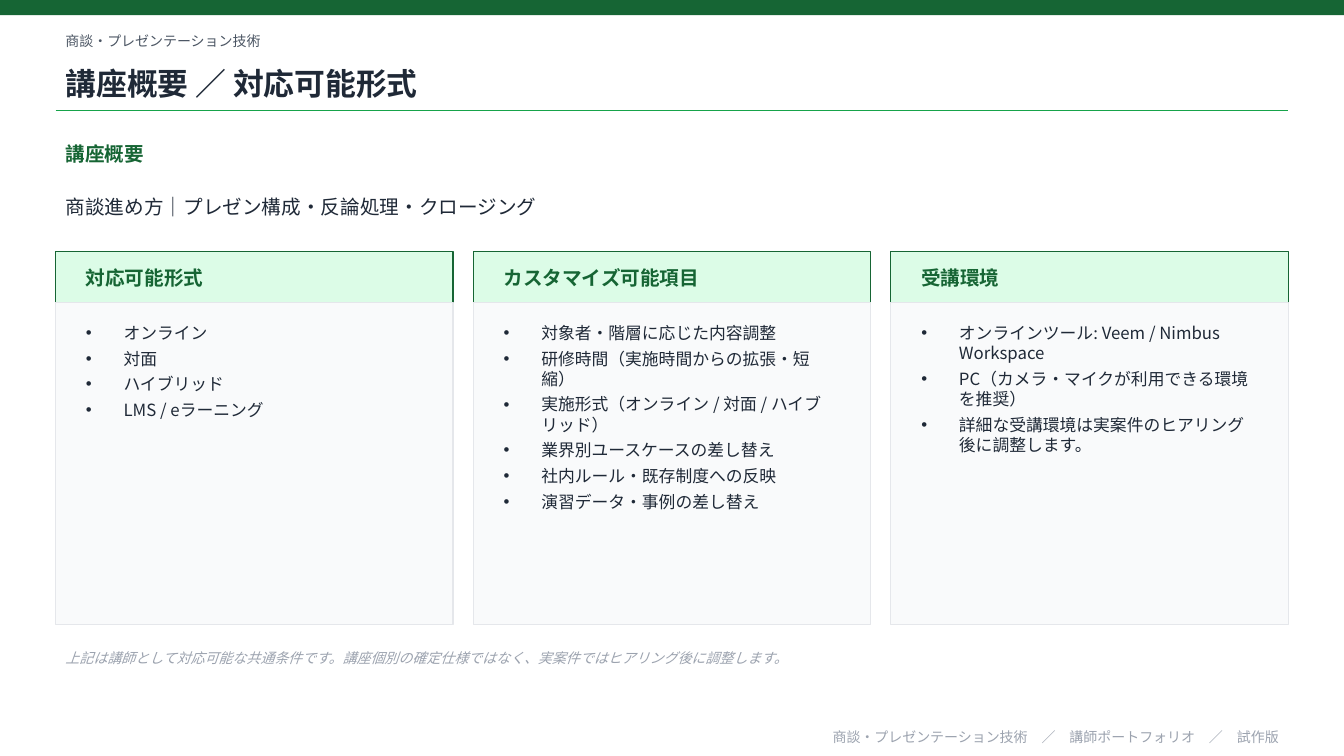
import pptx
import pptx.dml.color
import pptx.enum.shapes
import pptx.enum.text
import pptx.oxml.ns
import pptx.util
from lxml import etree

Cm = pptx.util.Cm
Pt = pptx.util.Pt
qn = pptx.oxml.ns.qn
ALIGN = pptx.enum.text.PP_ALIGN
ANCHOR = pptx.enum.text.MSO_ANCHOR

GREEN, BRIGHT, PALE = "166534", "16A34A", "DCFCE7"
INK, GRAY, MUTED = "1F2937", "4B5563", "9CA3AF"
PANEL, BORDER = "F9FAFB", "E5E7EB"
SLIDE_WIDTH, SLIDE_HEIGHT = 33.87, 19.05
MARGIN, GAP = 1.4, 0.51
CONTENT_WIDTH = SLIDE_WIDTH - 2 * MARGIN
HEADER_TOP, HEADER_HEIGHT, PANEL_HEIGHT = 6.35, 1.27, 8.13

CARDS = [
    (2, "対応可能形式", ["オンライン", "対面", "ハイブリッド", "LMS / eラーニング"]),
    (3, "カスタマイズ可能項目", [
        "対象者・階層に応じた内容調整",
        "研修時間（実施時間からの拡張・短縮）",
        "実施形式（オンライン / 対面 / ハイブリッド）",
        "業界別ユースケースの差し替え",
        "社内ルール・既存制度への反映",
        "演習データ・事例の差し替え",
    ]),
    (4, "受講環境", [
        "オンラインツール: Veem / Nimbus Workspace",
        "PC（カメラ・マイクが利用できる環境を推奨）",
        "詳細な受講環境は実案件のヒアリング後に調整します。",
    ]),
]


def color(hex_string):
    return pptx.dml.color.RGBColor.from_string(hex_string)


class SlideBuilder:
    """Draws styled elements on the current slide."""

    font_name = "Noto Sans CJK JP"

    def __init__(self, slide):
        self.slide = slide

    def fill_text(self, shape, lines, size, hex_color, bold=False, italic=False,
                  align=ALIGN.LEFT, anchor=ANCHOR.MIDDLE, bullets=False):
        frame = shape.text_frame
        frame.word_wrap = True
        frame.auto_size = pptx.enum.text.MSO_AUTO_SIZE.NONE
        frame.vertical_anchor = anchor
        frame.text = "\n".join(lines)
        for paragraph in frame.paragraphs:
            properties = paragraph._p.get_or_add_pPr()
            indent = Cm(0.95) if bullets else 0
            properties.set("marL", str(indent))
            properties.set("indent", str(-indent))
            if bullets:
                etree.SubElement(properties, qn("a:buChar"), char="•")
            else:
                etree.SubElement(properties, qn("a:buNone"))
            paragraph.alignment = align
            paragraph.space_before = Pt(0)
            paragraph.space_after = Pt(4 if bullets else 0)
            font = paragraph.font
            font.name, font.size = self.font_name, Pt(size)
            font.bold, font.italic = bold, italic
            font.color.rgb = color(hex_color)
            etree.SubElement(properties.find(qn("a:defRPr")), qn("a:ea"),
                             typeface=self.font_name)

    def text(self, box, line, size, hex_color, **style):
        shape = self.slide.shapes.add_textbox(*map(Cm, box))
        self.fill_text(shape, [line], size, hex_color, **style)

    def placeholder(self, index, box, lines, size, hex_color, **style):
        shape = next(item for item in self.slide.placeholders
                     if item.placeholder_format.idx == index)
        shape.left, shape.top, shape.width, shape.height = map(Cm, box)
        self.slide.shapes.element.append(shape.element)
        self.fill_text(shape, lines, size, hex_color, **style)

    def rectangle(self, box, fill, outline=None):
        shape = self.slide.shapes.add_shape(
            pptx.enum.shapes.MSO_SHAPE.RECTANGLE, *map(Cm, box))
        shape.shadow.inherit = False
        shape.fill.solid()
        shape.fill.fore_color.rgb = color(fill)
        if outline:
            shape.line.color.rgb = color(outline)
            shape.line.width = Pt(0.75)
        else:
            shape.line.fill.background()
        return shape

    def rule(self, left, top, width, hex_color):
        line = self.slide.shapes.add_connector(
            pptx.enum.shapes.MSO_CONNECTOR.STRAIGHT,
            Cm(left), Cm(top), Cm(left + width), Cm(top))
        line.line.color.rgb = color(hex_color)
        line.line.width = Pt(1)
        etree.SubElement(line.element.spPr, qn("a:effectLst"))

    def card(self, left, width, index, heading, items):
        header = self.rectangle((left, HEADER_TOP, width, HEADER_HEIGHT), PALE, GREEN)
        header.text_frame.margin_left = Cm(0.76)
        self.fill_text(header, [heading], 14, GREEN, bold=True)
        panel_top = HEADER_TOP + HEADER_HEIGHT
        self.rectangle((left, panel_top, width, PANEL_HEIGHT), PANEL, BORDER)
        self.placeholder(index, (left + 0.51, panel_top + 0.38, width - 1.02, 7.24),
                         items, 12, INK, anchor=ANCHOR.TOP, bullets=True)


def main():
    presentation = pptx.Presentation()
    presentation.slide_width = Cm(SLIDE_WIDTH)
    presentation.slide_height = Cm(SLIDE_HEIGHT)
    layout = presentation.slide_layouts.get_by_name("Comparison")
    builder = SlideBuilder(presentation.slides.add_slide(layout))

    builder.rectangle((0, 0, SLIDE_WIDTH, 0.38), GREEN)
    builder.text((MARGIN, 0.64, CONTENT_WIDTH, 0.76),
                 "商談・プレゼンテーション技術", 10, GRAY)
    builder.placeholder(0, (MARGIN, 1.4, CONTENT_WIDTH, 1.4),
                        ["講座概要 ／ 対応可能形式"], 22, INK, bold=True)
    builder.rule(MARGIN, 2.79, CONTENT_WIDTH, BRIGHT)
    builder.text((MARGIN, 3.43, CONTENT_WIDTH, 0.89), "講座概要", 14, GREEN, bold=True)
    builder.placeholder(1, (MARGIN, 4.45, CONTENT_WIDTH, 1.52),
                        ["商談進め方｜プレゼン構成・反論処理・クロージング"], 14, INK)

    card_width = (CONTENT_WIDTH - GAP * (len(CARDS) - 1)) / len(CARDS)
    for column, card in enumerate(CARDS):
        builder.card(MARGIN + column * (card_width + GAP), card_width, *card)

    builder.text((MARGIN, 16.13, CONTENT_WIDTH, 0.89),
                 "上記は講師として対応可能な共通条件です。講座個別の確定仕様ではなく、"
                 "実案件ではヒアリング後に調整します。", 10, MUTED, italic=True)
    builder.text((MARGIN, 18.29, CONTENT_WIDTH, 0.56),
                 "商談・プレゼンテーション技術　／　講師ポートフォリオ　／　試作版",
                 10, MUTED, align=ALIGN.RIGHT)
    presentation.save("out.pptx")


if __name__ == "__main__":
    main()
